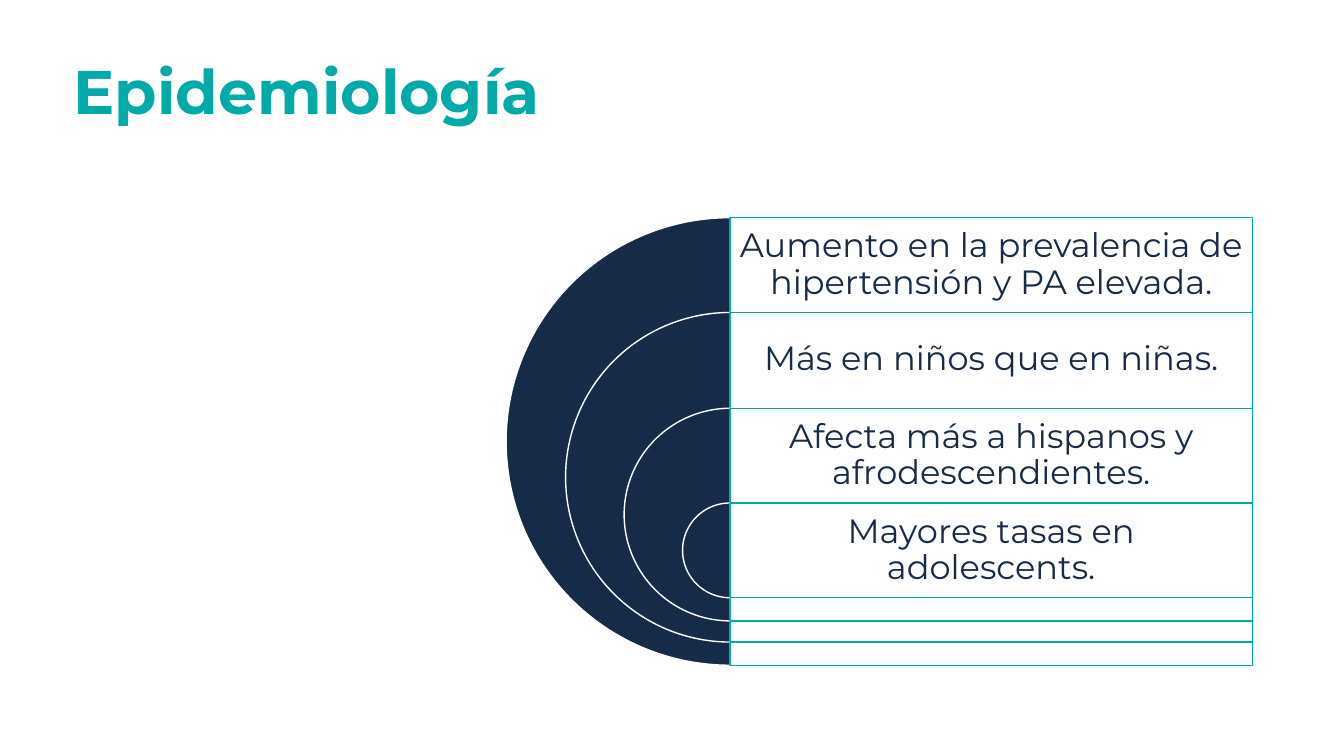
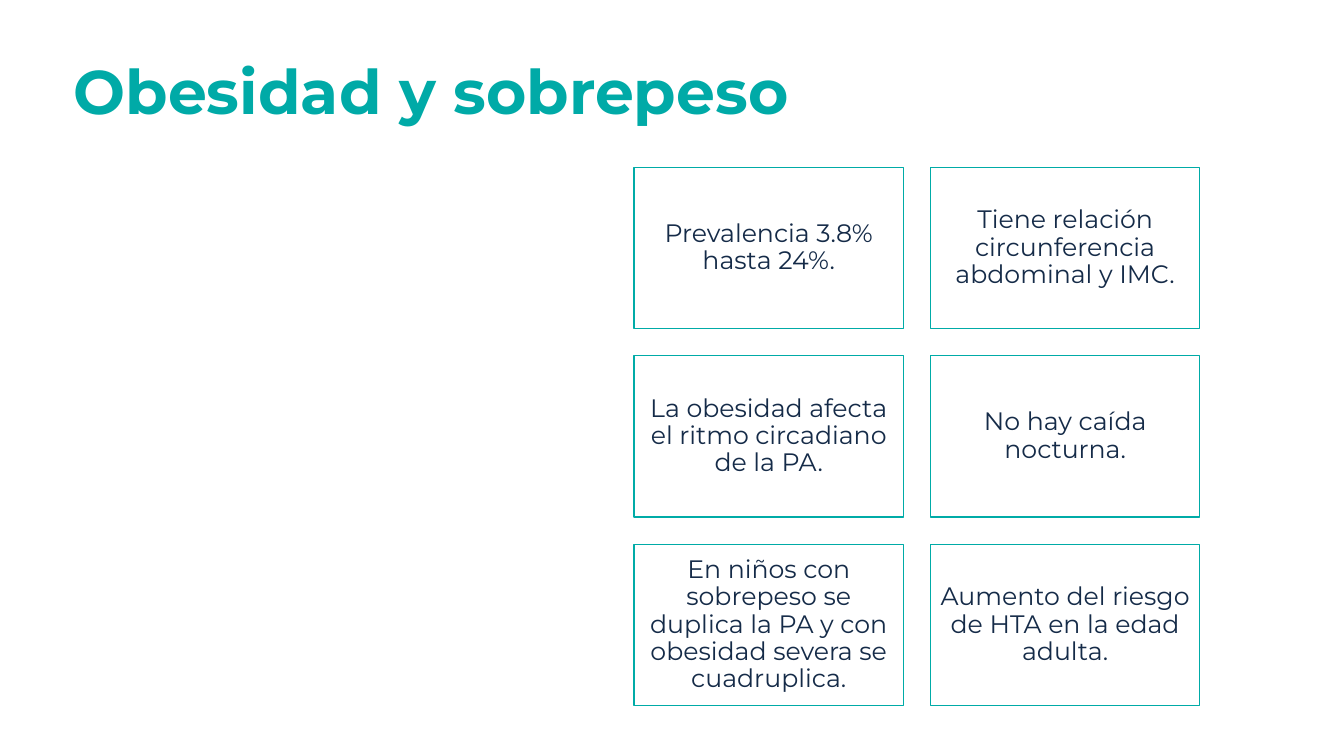
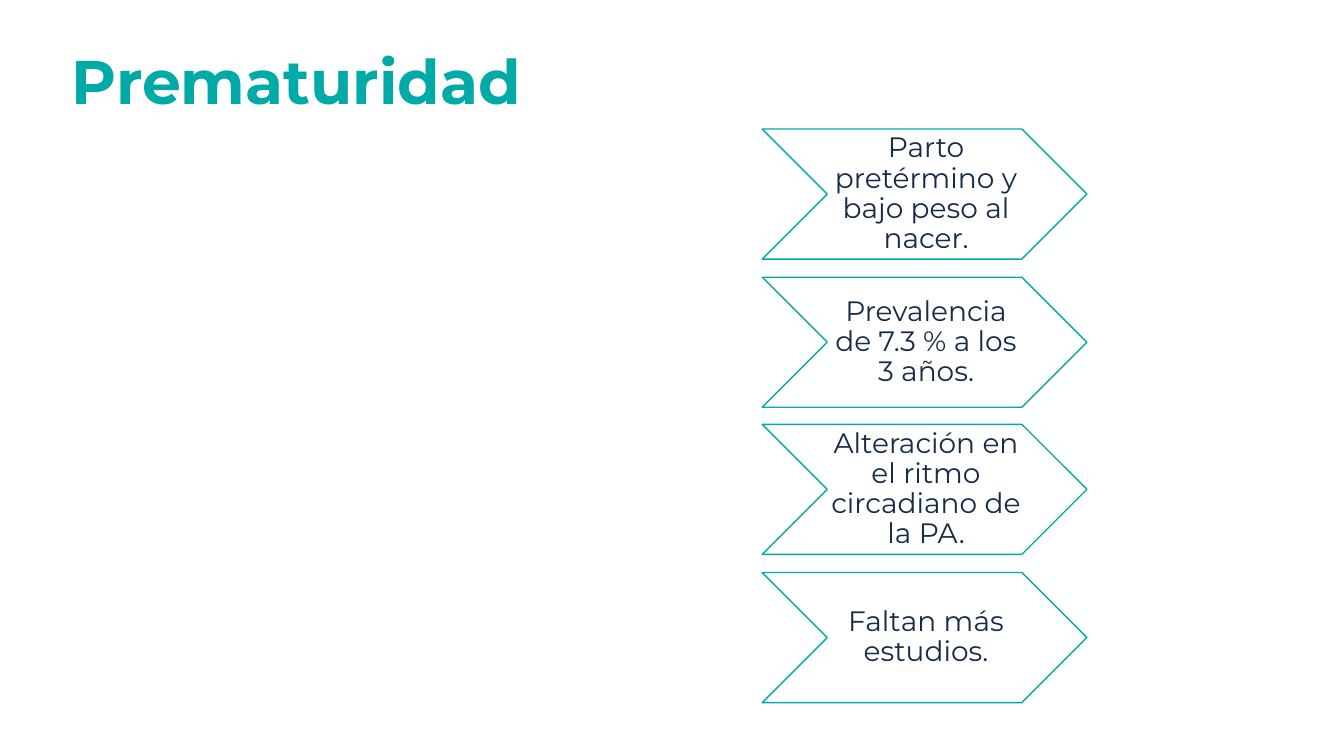
from dataclasses import dataclass
from typing import NamedTuple

from lxml import etree
from pptx import Presentation
from pptx.dml.color import RGBColor
from pptx.enum.shapes import MSO_SHAPE
from pptx.enum.text import MSO_ANCHOR, MSO_AUTO_SIZE, PP_ALIGN
from pptx.oxml.ns import qn
from pptx.util import Pt

PIE, RECTANGLE, CHEVRON = MSO_SHAPE.PIE, MSO_SHAPE.RECTANGLE, MSO_SHAPE.CHEVRON
MIDDLE = MSO_ANCHOR.MIDDLE
NO_FIT = MSO_AUTO_SIZE.NONE
LEFT, CENTER = PP_ALIGN.LEFT, PP_ALIGN.CENTER
EMU_PER_PX = 9144
TITLE_ONLY = 5


@dataclass(frozen=True)
class Theme:
    font: str = "Montserrat"
    title: RGBColor = RGBColor(0x00, 0xAA, 0xA7)
    outline: RGBColor = RGBColor(0x00, 0xAB, 0xA7)
    navy: RGBColor = RGBColor(0x15, 0x2B, 0x48)
    white: RGBColor = RGBColor(0xFF, 0xFF, 0xFF)
    title_size: int = 44
    panel_size: int = 24
    card_size: int = 18
    chevron_size: int = 20
    line_width: int = 1
    line_spacing: float = 0.9


class Box(NamedTuple):
    left: int
    top: int
    width: int
    height: int

    def emu(self):
        return [px(length) for length in self]


THEME = Theme()


def px(length):
    return length * EMU_PER_PX


def write(shape, text, size, color, align, insets, bold=False):
    frame = shape.text_frame
    frame.word_wrap = True
    frame.auto_size = NO_FIT
    frame.vertical_anchor = MIDDLE
    (frame.margin_left, frame.margin_top,
     frame.margin_right, frame.margin_bottom) = [px(inset) for inset in insets]
    para = frame.paragraphs[0]
    para.alignment = align
    para.line_spacing = THEME.line_spacing
    span = para.add_run()
    span.text = text
    span.font.name = THEME.font
    span.font.size = Pt(size)
    span.font.bold = bold
    span.font.color.rgb = color


def add_outlined(page, kind, box, fill, line):
    shape = page.shapes.add_shape(kind, *box.emu())
    shape.shadow.inherit = False
    shape.fill.solid()
    shape.fill.fore_color.rgb = fill
    shape.line.color.rgb = line
    shape.line.width = Pt(THEME.line_width)
    return shape


def set_opacity(shape, percent):
    color = shape.fill._xPr.find(qn("a:solidFill"))[0]
    etree.SubElement(color, qn("a:alpha"), val=str(percent * 1000))


def add_page(deck, title, box):
    page = deck.slides.add_slide(deck.slide_layouts[TITLE_ONLY])
    heading = page.shapes.title
    heading.left, heading.top, heading.width, heading.height = box.emu()
    write(heading, title, THEME.title_size, THEME.title, LEFT, (13,) * 4, bold=True)
    return page


def add_nested_arcs(page, box, texts):
    row = 94
    steps = len(texts) - 1
    center = box.left + box.height // 2
    for index, text in enumerate(texts):
        diameter = box.height - round((box.height - row) * index / steps)
        top = box.top + round(283 * index / steps)
        arc = add_outlined(page, PIE, Box(center - diameter // 2, top, diameter, diameter),
                           THEME.navy, THEME.white)
        arc.adjustments[0], arc.adjustments[1] = 54, 162
        panel = add_outlined(page, RECTANGLE,
                             Box(center, top, box.left + box.width - center, diameter),
                             THEME.white, THEME.outline)
        set_opacity(panel, 90)
        write(panel, text, THEME.panel_size, THEME.navy, CENTER,
              (10, 10, 10, diameter - row + 10))


def add_card_grid(page, box, texts, columns=2, gap=27):
    rows = len(texts) // columns
    width = (box.width - gap * (columns - 1)) // columns
    height = (box.height - gap * (rows - 1)) // rows
    for index, text in enumerate(texts):
        row, column = divmod(index, columns)
        card = add_outlined(page, RECTANGLE,
                            Box(box.left + column * (width + gap),
                                box.top + row * (height + gap), width, height),
                            THEME.white, THEME.outline)
        write(card, text, THEME.card_size, THEME.navy, CENTER, (7,) * 4)


def add_chevron_stack(page, box, texts, height=129):
    for index, text in enumerate(texts):
        top = box.top + round((box.height - height) * index / (len(texts) - 1))
        chevron = add_outlined(page, CHEVRON, Box(box.left, top, box.width, height),
                               THEME.white, THEME.outline)
        write(chevron, text, THEME.chevron_size, THEME.navy, CENTER, (3, 1, 0, 1))


def main():
    deck = Presentation()
    deck.slide_width, deck.slide_height = px(1333), px(750)
    title_box = Box(60, 21, 1150, 145)

    page = add_page(deck, "Epidemiología", title_box)
    add_nested_arcs(page, Box(502, 216, 740, 444), [
        "Aumento en la prevalencia de hipertensión y PA elevada.",
        "Más en niños que en niñas.",
        "Afecta más a hispanos y afrodescendientes.",
        "Mayores tasas en adolescents.",
    ])

    page = add_page(deck, "Obesidad y sobrepeso", title_box)
    add_card_grid(page, Box(629, 166, 561, 534), [
        "Prevalencia 3.8% hasta 24%.",
        "Tiene relación circunferencia abdominal y IMC.",
        "La obesidad afecta el ritmo circadiano de la PA.",
        "No hay caída nocturna.",
        "En niños con sobrepeso se duplica la PA y con obesidad severa se cuadruplica.",
        "Aumento del riesgo de HTA en la edad adulta.",
    ])

    page = add_page(deck, "Prematuridad", title_box._replace(left=58, top=11))
    add_chevron_stack(page, Box(756, 128, 322, 569), [
        "Parto pretérmino y bajo peso al nacer.",
        "Prevalencia de 7.3 % a los 3 años.",
        "Alteración en el ritmo circadiano de la PA.",
        "Faltan más estudios.",
    ])

    deck.save("out.pptx")


if __name__ == "__main__":
    main()
